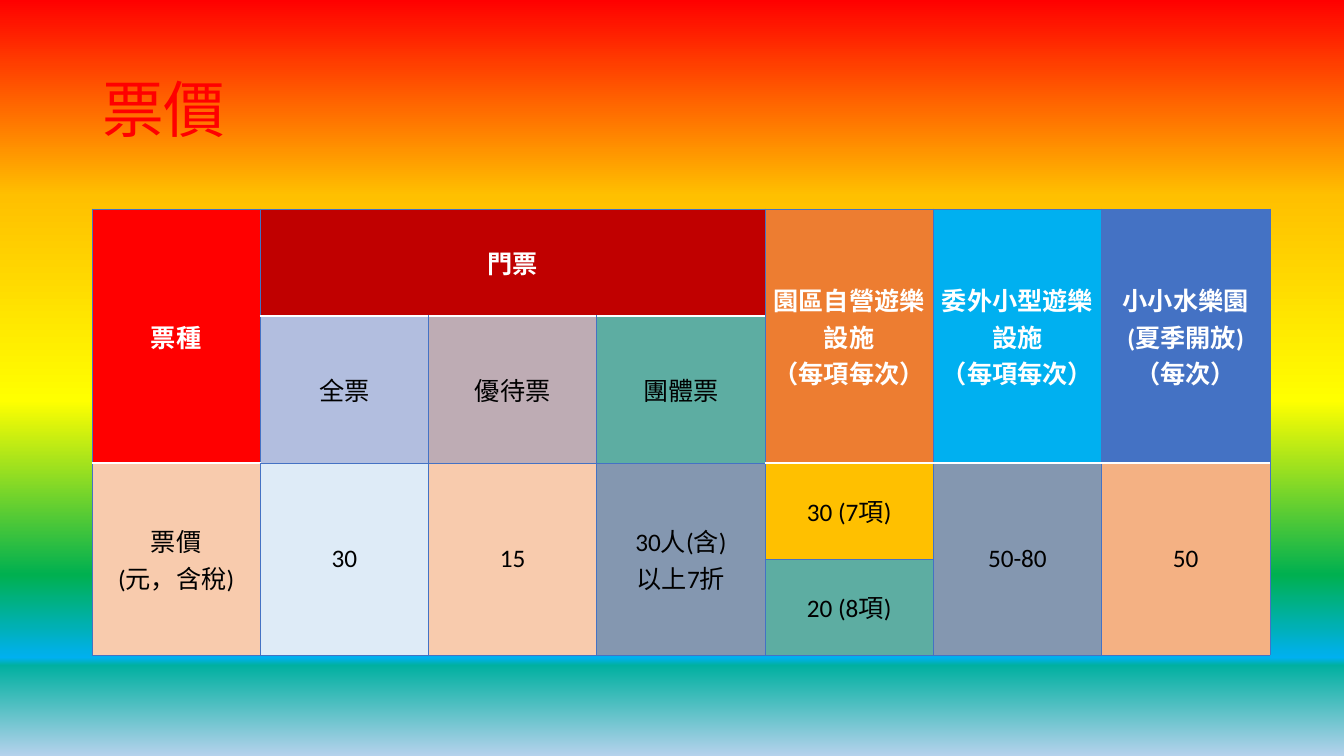
import pptx
import pptx.util
import pptx.dml.color
import pptx.enum.text
import pptx.oxml
import pptx.oxml.ns
from lxml import etree

RGBColor = pptx.dml.color.RGBColor
Align = pptx.enum.text.PP_ALIGN
Anchor = pptx.enum.text.MSO_ANCHOR
qn = pptx.oxml.ns.qn

RED = RGBColor(0xFF, 0x00, 0x00)
DARK_RED = RGBColor(0xC0, 0x00, 0x00)
GOLD = RGBColor(0xFF, 0xC0, 0x00)
YELLOW = RGBColor(0xFF, 0xFF, 0x00)
GREEN = RGBColor(0x00, 0xB0, 0x50)
SKY = RGBColor(0x00, 0xB0, 0xF0)
TEAL = RGBColor(0x00, 0xB0, 0xA0)
MIST = RGBColor(0xB5, 0xD2, 0xEC)
ORANGE = RGBColor(0xED, 0x7D, 0x31)
BLUE = RGBColor(0x44, 0x72, 0xC4)
LAVENDER = RGBColor(0xB2, 0xBE, 0xDF)
MAUVE = RGBColor(0xBE, 0xAC, 0xB4)
SEA = RGBColor(0x5D, 0xAD, 0xA2)
PEACH = RGBColor(0xF8, 0xCB, 0xAD)
ICE = RGBColor(0xDE, 0xEB, 0xF7)
SLATE = RGBColor(0x84, 0x97, 0xB0)
APRICOT = RGBColor(0xF4, 0xB1, 0x83)
WHITE = RGBColor(0xFF, 0xFF, 0xFF)
BLACK = RGBColor(0x00, 0x00, 0x00)

PLAIN_STYLE = "{2D5ABB26-0587-4C30-8999-92F81FD0307C}"
SKY_STOPS = [(0, RED), (26, GOLD), (53, YELLOW), (76, GREEN),
             (87, SKY), (88, TEAL), (100, MIST)]
COLUMNS = 7
ROW_HEIGHTS = [107, 147, 96, 96]
# Columns with a white rule above the given row
WHITE_RULES = {1: {1, 2, 3}, 2: {0, 4, 5, 6}}

# row, column, row span, column span, fill, text
HEADERS = [
    (0, 0, 2, 1, RED, "票種"),
    (0, 1, 1, 3, DARK_RED, "門票"),
    (0, 4, 2, 1, ORANGE, "園區自營遊樂設施\v（每項每次）"),
    (0, 5, 2, 1, SKY, "委外小型遊樂設施\v（每項每次）"),
    (0, 6, 2, 1, BLUE, "小小水樂園\v(夏季開放)\v（每次）"),
]
PRICES = [
    (1, 1, 1, 1, LAVENDER, "全票"),
    (1, 2, 1, 1, MAUVE, "優待票"),
    (1, 3, 1, 1, SEA, "團體票"),
    (2, 0, 2, 1, PEACH, "票價\v(元，含稅)"),
    (2, 1, 2, 1, ICE, "30"),
    (2, 2, 2, 1, PEACH, "15"),
    (2, 3, 2, 1, SLATE, "30人(含)\v以上7折"),
    (2, 4, 1, 1, GOLD, "30 (7項)"),
    (3, 4, 1, 1, SEA, "20 (8項)"),
    (2, 5, 2, 1, SLATE, "50-80"),
    (2, 6, 2, 1, APRICOT, "50"),
]


def px(count):
    return pptx.util.Emu(round(count * 914400 / 100.8))


class Painter:
    latin = "Calibri"
    asian = "Noto Sans CJK JP"

    def __init__(self, page):
        self.page = page

    def background(self, stops):
        fill = self.page.background.fill
        fill.gradient()
        fill.gradient_angle = 270
        stop_list = next(self.page.element.iter(qn("a:gsLst")))
        for old in list(stop_list):
            stop_list.remove(old)
        for percent, color in stops:
            stop = etree.SubElement(stop_list, qn("a:gs"), pos=str(percent * 1000))
            etree.SubElement(stop, qn("a:srgbClr"), val=str(color))

    def format(self, para, align, size, color, latin, bold=False):
        para.alignment = align
        for span in para.runs:
            font = span.font
            font.name, font.size, font.bold = latin, pptx.util.Pt(size), bold
            font.color.rgb = color
            east = pptx.oxml.parse_xml(
                f'<a:ea {pptx.oxml.ns.nsdecls("a")} typeface="{self.asian}"/>')
            font._element.find(qn("a:latin")).addnext(east)

    def title(self, text, left, top, width, height):
        box = self.page.shapes.title
        box.left, box.top, box.width, box.height = map(px, (left, top, width, height))
        frame = box.text_frame
        frame.text = text
        frame.auto_size = pptx.enum.text.MSO_AUTO_SIZE.NONE
        frame.vertical_anchor = Anchor.MIDDLE
        para = frame.paragraphs[0]
        para.line_spacing = 0.9
        self.format(para, Align.LEFT, 44, RED, self.asian)

    def table(self, left, top, width, heights, columns):
        frame = self.page.shapes.add_table(
            len(heights), columns, px(left), px(top), px(width), px(sum(heights)))
        grid = frame.table
        next(frame.element.iter(qn("a:tableStyleId"))).text = PLAIN_STYLE
        grid.horz_banding = False
        for column in grid.columns:
            column.width = px(width) // columns
        for row, height in zip(grid.rows, heights):
            row.height = px(height)
        return grid

    def borders(self, cell, sides):
        properties = cell._tc.get_or_add_tcPr()
        for index, (side, (color, points)) in enumerate(sides.items()):
            line = etree.Element(qn(f"a:ln{side}"), w=str(pptx.util.Pt(points)))
            fill = etree.SubElement(line, qn("a:solidFill"))
            etree.SubElement(fill, qn("a:srgbClr"), val=str(color))
            properties.insert(index, line)

    def cell(self, grid, entry, color, bold):
        row, column, tall, wide, fill, text = entry
        cell = grid.cell(row, column)
        if tall * wide > 1:
            cell.merge(grid.cell(row + tall - 1, column + wide - 1))
        cell.text = text
        cell.vertical_anchor = Anchor.MIDDLE
        cell.margin_left = cell.margin_right = px(3)
        cell.margin_top = cell.margin_bottom = px(3)
        cell.fill.solid()
        cell.fill.fore_color.rgb = fill
        self.format(cell.text_frame.paragraphs[0], Align.CENTER, 18, color,
                    self.latin, bold)


def rule(row, column):
    white = column in WHITE_RULES.get(row, ())
    return (WHITE, 1) if white else (BLUE, 0.5)


def main():
    deck = pptx.Presentation()
    deck.slide_width, deck.slide_height = px(1344), px(756)
    painter = Painter(deck.slides.add_slide(deck.slide_layouts[5]))

    # Rainbow background and title
    painter.background(SKY_STOPS)
    painter.title("票價", 92, 40, 1159, 146)

    # Price table
    grid = painter.table(92, 209, 1178, ROW_HEIGHTS, COLUMNS)
    for entry in HEADERS:
        painter.cell(grid, entry, WHITE, True)
    for entry in PRICES:
        painter.cell(grid, entry, BLACK, False)

    # Cell borders
    for row in range(len(ROW_HEIGHTS)):
        for column in range(COLUMNS):
            painter.borders(grid.cell(row, column), {
                "L": (BLUE, 0.5), "R": (BLUE, 0.5),
                "T": rule(row, column), "B": rule(row + 1, column)})

    deck.save("out.pptx")


if __name__ == "__main__":
    main()
